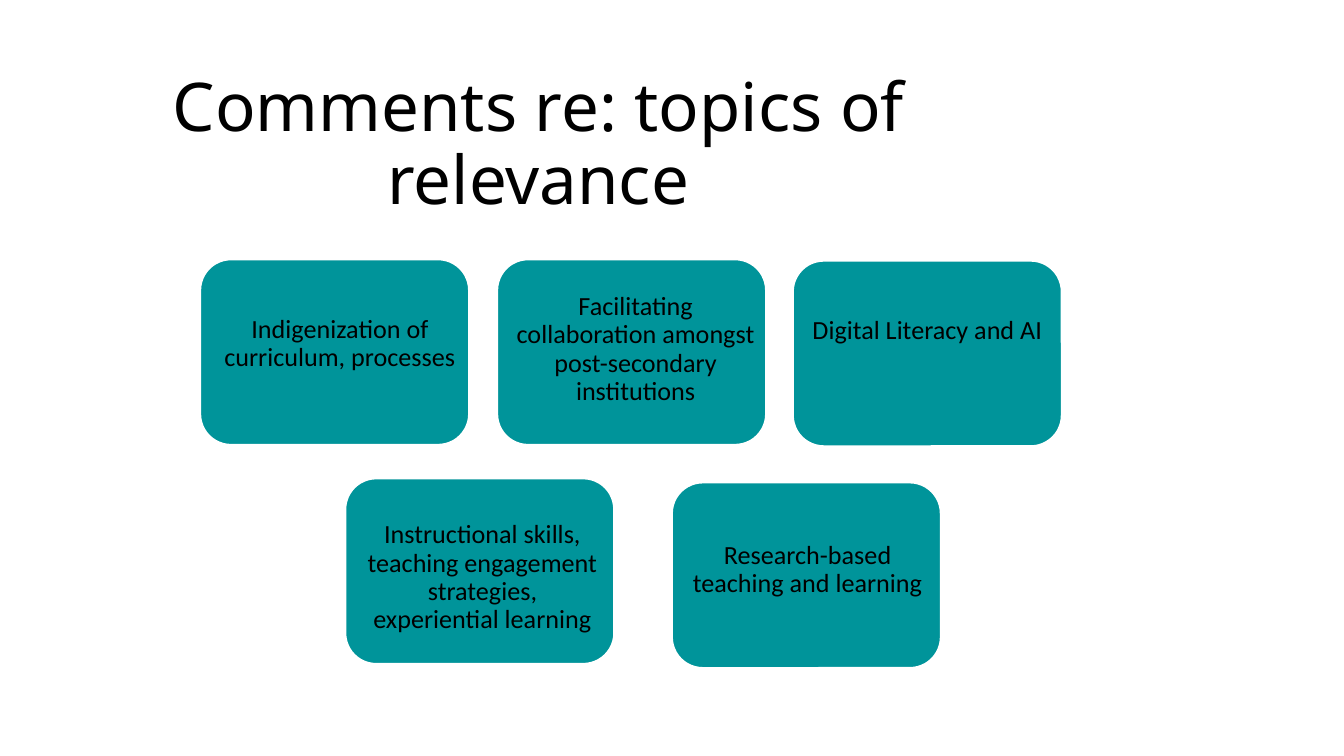
from typing import NamedTuple

from pptx import Presentation
from pptx.dml.color import RGBColor
from pptx.enum.shapes import MSO_SHAPE
from pptx.enum.text import MSO_ANCHOR, PP_ALIGN
from pptx.slide import Slide
from pptx.text.text import TextFrame
from pptx.util import Inches, Pt

TEAL, WHITE, BLACK = "00949A", "FFFFFF", "000000"
WIDTH, HEIGHT = 2, 1.38
INSET = 0.11


class Topic(NamedTuple):
    left: float
    top: float
    shift: float  # label offset from the card, across
    drop: float  # label offset from the card, down
    text: str


TOPICS = [
    Topic(1.49, 1.93, 0.04, 0.31, "Indigenization of curriculum, processes"),
    Topic(3.7, 1.93, 0.03, 0.14,
          "Facilitating collaboration amongst post-secondary institutions"),
    Topic(5.9, 1.94, 0, 0.31, "Digital Literacy and AI"),
    Topic(2.57, 3.56, 0.02, 0.21,
          "Instructional skills, teaching engagement strategies, experiential learning"),
    Topic(5, 3.59, 0.01, 0.33, "Research-based teaching and learning"),
]


def color(code: str) -> RGBColor:
    return RGBColor.from_string(code)


def write(frame: TextFrame, text: str, font: str, size: float) -> None:
    frame.word_wrap = True
    para = frame.paragraphs[0]
    para.alignment = PP_ALIGN.CENTER
    para.line_spacing = 0.9
    run = para.add_run()
    run.text = text
    run.font.name = font
    run.font.size = Pt(size)
    run.font.color.rgb = color(BLACK)


def add_title(slide: Slide, text: str) -> None:
    title = slide.shapes.title
    title.left, title.top = Inches(0.53), Inches(0.24)
    title.width, title.height = Inches(6.95), Inches(1.44)
    title.text_frame.vertical_anchor = MSO_ANCHOR.BOTTOM
    write(title.text_frame, text, "Noto Sans", 36)


def add_topic(slide: Slide, topic: Topic) -> None:
    """Draw a rounded card with its label in a box over it."""
    card = slide.shapes.add_shape(
        MSO_SHAPE.ROUNDED_RECTANGLE, Inches(topic.left), Inches(topic.top),
        Inches(WIDTH), Inches(HEIGHT))
    card.shadow.inherit = False
    card.fill.solid()
    card.fill.fore_color.rgb = color(TEAL)
    card.line.color.rgb = color(WHITE)
    card.line.width = Pt(1)

    label = slide.shapes.add_textbox(
        Inches(topic.left + topic.shift), Inches(topic.top + topic.drop),
        Inches(WIDTH), Inches(0.74))
    frame = label.text_frame
    frame.margin_left = frame.margin_right = frame.margin_top = Inches(INSET)
    frame.margin_bottom = 0
    frame.vertical_anchor = MSO_ANCHOR.TOP
    write(frame, topic.text, "Calibri", 14)


def main() -> None:
    deck = Presentation()
    deck.slide_width = Inches(10)
    deck.slide_height = Inches(10) * 9 // 16
    slide = deck.slides.add_slide(deck.slide_layouts[5])
    add_title(slide, "Comments re: topics of relevance")
    for topic in TOPICS:
        add_topic(slide, topic)
    deck.save("out.pptx")


if __name__ == "__main__":
    main()
